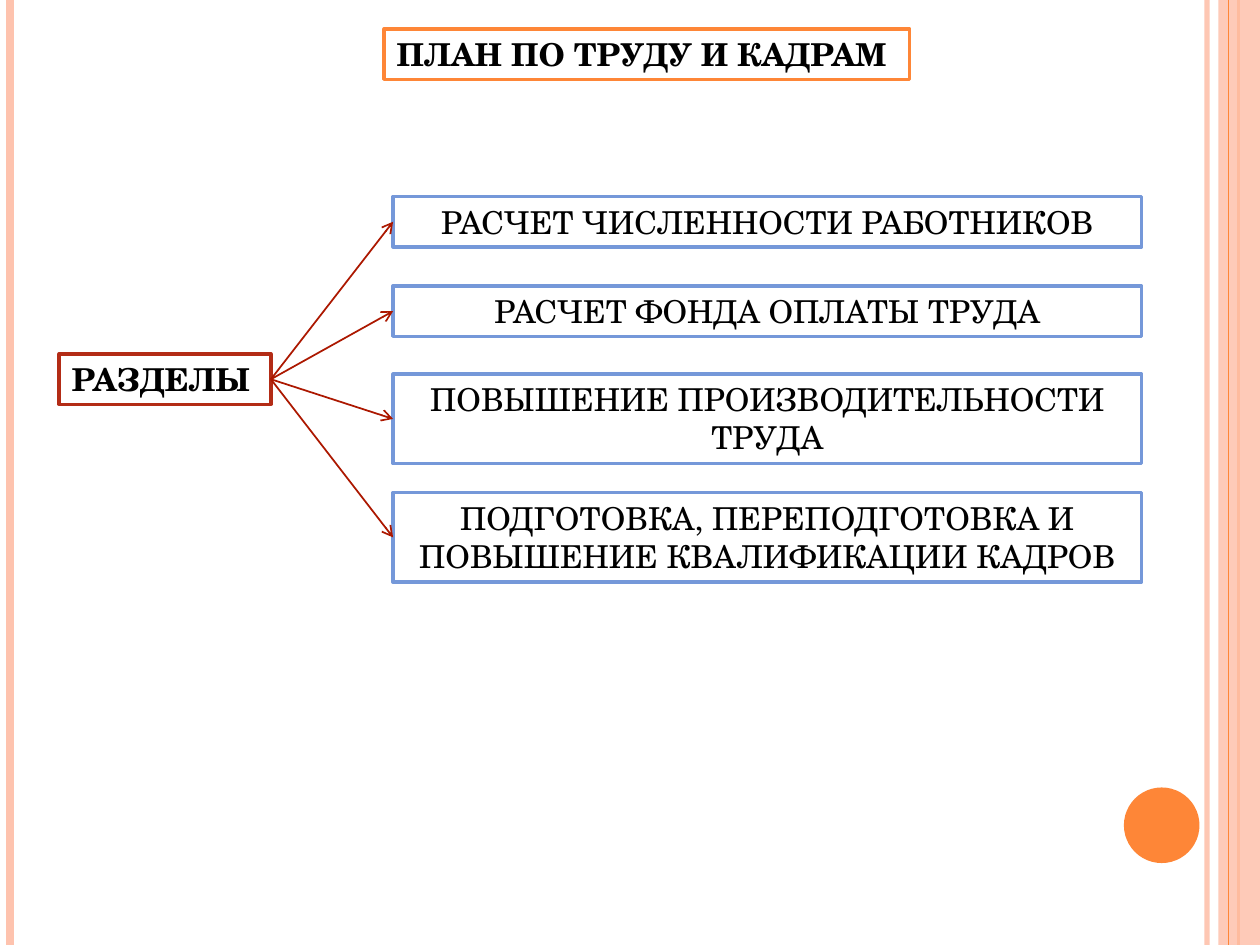
import pptx
import pptx.dml.color
import pptx.enum.shapes
import pptx.enum.text
import pptx.oxml.ns
import pptx.util
from lxml import etree

Inches = pptx.util.Inches
Shapes = pptx.enum.shapes.MSO_SHAPE
Align = pptx.enum.text.PP_ALIGN
qn = pptx.oxml.ns.qn


def color(value):
    return pptx.dml.color.RGBColor.from_string(value)


class SlideBuilder:
    font = "TeX Gyre Schola"
    font_size = 18
    text_color = "000000"
    box_fill = "FFFFFF"
    border_width = 2
    left_site, right_site = 1, 3

    def __init__(self, slide):
        self.slide = slide

    def set_opacity(self, fill_parent, percent):
        rgb = next(fill_parent.iter(qn("a:srgbClr")))
        etree.SubElement(rgb, qn("a:alpha"), val=str(percent * 1000))

    def line(self, start, end, line_color, width, opacity=100):
        connector = self.slide.shapes.add_connector(
            pptx.enum.shapes.MSO_CONNECTOR.STRAIGHT,
            *(Inches(value) for value in (*start, *end)))
        connector.line.color.rgb = color(line_color)
        connector.line.width = pptx.util.Pt(width)
        properties = connector._element.spPr
        if opacity < 100:
            self.set_opacity(properties, opacity)
        etree.SubElement(properties, qn("a:effectLst"))
        return connector

    def stripe(self, x, line_color, width, opacity=100):
        self.line((x, 0), (x, 7.5), line_color, width, opacity)

    def decoration(self, kind, bounds, fill_color, opacity=100):
        shape = self.slide.shapes.add_shape(kind, *(Inches(value) for value in bounds))
        shape.shadow.inherit = False
        shape.fill.solid()
        shape.fill.fore_color.rgb = color(fill_color)
        shape.line.fill.background()
        if opacity < 100:
            self.set_opacity(shape._element.spPr, opacity)

    def box(self, text, bounds, border, align=Align.LEFT, bold=False):
        box = self.slide.shapes.add_textbox(*(Inches(value) for value in bounds))
        box.fill.solid()
        box.fill.fore_color.rgb = color(self.box_fill)
        box.line.color.rgb = color(border)
        box.line.width = pptx.util.Pt(self.border_width)
        frame = box.text_frame
        frame.word_wrap = True
        frame.auto_size = pptx.enum.text.MSO_AUTO_SIZE.SHAPE_TO_FIT_TEXT
        frame.text = text
        paragraph = frame.paragraphs[0]
        paragraph.alignment = align
        for run in paragraph.runs:
            run.font.name = self.font
            run.font.size = pptx.util.Pt(self.font_size)
            run.font.bold = bold
            run.font.color.rgb = color(self.text_color)
        return box

    def arrow(self, source, target, line_color):
        connector = self.line((0, 0), (1, 1), line_color, 1)
        connector.begin_connect(source, self.right_site)
        connector.end_connect(target, self.left_site)
        etree.SubElement(connector.line._get_or_add_ln(), qn("a:tailEnd"), type="arrow")


def main():
    presentation = pptx.Presentation()
    presentation.slide_width = Inches(10)
    presentation.slide_height = Inches(7.5)
    builder = SlideBuilder(presentation.slides.add_slide(presentation.slide_layouts[6]))

    peach, orange = "FEC3AE", "FE8637"
    builder.stripe(9.58, peach, 3, 93)
    builder.stripe(0.08, peach, 4.5)
    builder.stripe(9.83, orange, 1.5)
    builder.decoration(Shapes.RECTANGLE, (9.67, 0, 0.33, 7.5), peach, 87)
    builder.stripe(9.75, orange, 0.75)
    builder.decoration(Shapes.OVAL, (8.92, 6.25, 0.6, 0.6), orange)

    builder.box("ПЛАН ПО ТРУДУ И КАДРАМ", (3.05, 0.23, 4.17, 0.4), orange, bold=True)
    sections = builder.box("РАЗДЕЛЫ", (0.47, 2.81, 1.68, 0.4), "B32C16", bold=True)

    plan_sections = [
        ("РАСЧЕТ ЧИСЛЕННОСТИ РАБОТНИКОВ", 1.56, 0.4),
        ("РАСЧЕТ ФОНДА ОПЛАТЫ ТРУДА", 2.27, 0.4),
        ("ПОВЫШЕНИЕ ПРОИЗВОДИТЕЛЬНОСТИ ТРУДА", 2.97, 0.71),
        ("ПОДГОТОВКА, ПЕРЕПОДГОТОВКА И ПОВЫШЕНИЕ КВАЛИФИКАЦИИ КАДРОВ", 3.91, 0.71),
    ]
    for text, top, height in plan_sections:
        section = builder.box(text, (3.12, top, 5.94, height), "7598D9", Align.CENTER)
        builder.arrow(sections, section, "AC1800")

    presentation.save("out.pptx")


if __name__ == "__main__":
    main()
